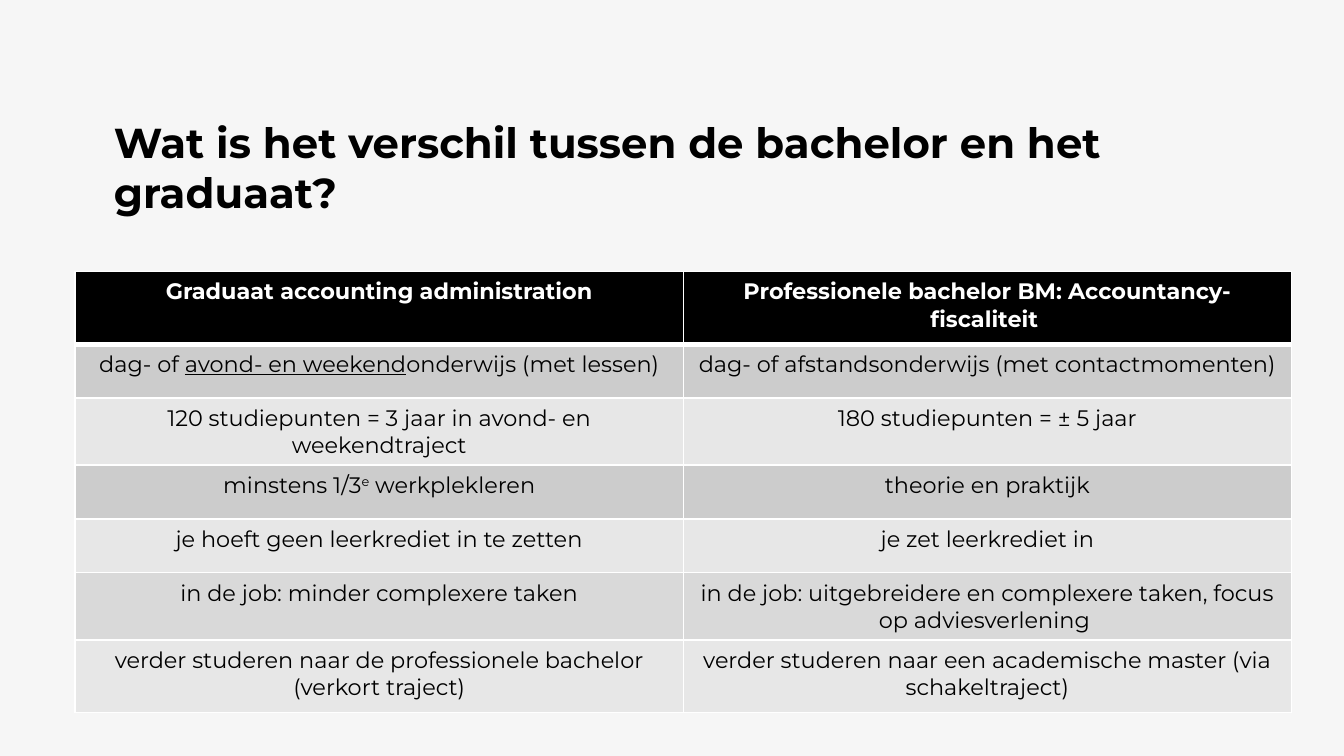
from lxml import etree
from pptx import Presentation
from pptx.dml.color import RGBColor
from pptx.enum.text import PP_ALIGN as Align
from pptx.oxml.ns import qn
from pptx.util import Inches, Pt

FONT = "Montserrat"
BLACK, WHITE, BACKGROUND = "000000", "FFFFFF", "F6F6F6"
DARK, MEDIUM, LIGHT = "CCCCCC", "D9D9D9", "E7E7E7"

TITLE = "Wat is het verschil tussen de bachelor en het graduaat?"

# Each row: minimum height, fill, left cell, right cell.
# A cell is a list of runs: (text, format).
ROWS = [
    (0.54, BLACK, [("Graduaat accounting administration", {})],
     [("Professionele bachelor BM: Accountancy-fiscaliteit ", {})]),
    (0.4, DARK,
     [("dag- of ", {}), ("avond- en weekend", {"underline": True}),
      ("onderwijs (met lessen)", {})],
     [("dag- of afstandsonderwijs (met contactmomenten)", {})]),
    (0.3, LIGHT,
     [("120 studiepunten = 3 jaar in avond- en weekendtraject", {})],
     [("180 studiepunten = ± 5 jaar", {})]),
    (0.4, DARK,
     [("minstens 1/3", {}), ("e", {"baseline": 30}), (" werkplekleren", {})],
     [("theorie en praktijk", {})]),
    (0.4, LIGHT, [("je hoeft geen leerkrediet in te zetten", {})],
     [("je zet leerkrediet in", {})]),
    (0.5, MEDIUM, [("in de job: minder complexere taken", {})],
     [("in de job: uitgebreidere en complexere taken, "
       "focus op adviesverlening ", {})]),
    (0.54, LIGHT,
     [("verder studeren naar de professionele bachelor (verkort traject)", {})],
     [("verder studeren naar een academische master (via schakeltraject)", {})]),
]


def color(value):
    return RGBColor.from_string(value)


def add_run(paragraph, text, size=12, fill=BLACK, bold=False,
            underline=False, baseline=0):
    run = paragraph.add_run()
    run.text = text
    font = run.font
    font.name, font.size, font.bold = FONT, Pt(size), bold
    font.color.rgb = color(fill)
    if underline:
        font.underline = True
    if baseline:
        font._element.set("baseline", str(baseline * 1000))


def set_borders(cell, **widths):
    """Draw white cell borders; they must precede the fill in the XML."""
    properties = cell._tc.get_or_add_tcPr()
    for index, (side, width) in enumerate(widths.items()):
        line = etree.Element(qn(f"a:ln{side}"), w=str(Pt(width)))
        solid = etree.SubElement(line, qn("a:solidFill"))
        etree.SubElement(solid, qn("a:srgbClr"), val=WHITE)
        properties.insert(index, line)


def add_title(slide, left, top, width, height):
    box = slide.shapes.add_textbox(
        Inches(left), Inches(top), Inches(width), Inches(height))
    box.text_frame.word_wrap = True
    add_run(box.text_frame.paragraphs[0], TITLE, size=22.4, bold=True)


def add_comparison(slide, left, top, width, height):
    frame = slide.shapes.add_table(
        len(ROWS), 2, Inches(left), Inches(top),
        Inches(width), Inches(height))
    table = frame.table
    for column in table.columns:
        column.width = Inches(width / 2)

    for row_index, (row_height, fill, *contents) in enumerate(ROWS):
        table.rows[row_index].height = Inches(row_height)
        header = row_index == 0
        for column_index, runs in enumerate(contents):
            cell = table.cell(row_index, column_index)
            cell.fill.solid()
            cell.fill.fore_color.rgb = color(fill)
            # A thick rule separates the header from the body
            set_borders(cell, L=1, R=1, T=3 if row_index == 1 else 1,
                        B=3 if header else 1)
            paragraph = cell.text_frame.paragraphs[0]
            paragraph.alignment = Align.CENTER
            for text, style in runs:
                add_run(paragraph, text, bold=header,
                        fill=WHITE if header else BLACK, **style)
    # Leave room for rows that grow with their text
    frame.height = Inches(height)


def main():
    presentation = Presentation()
    presentation.slide_width = Inches(10)
    presentation.slide_height = Inches(10 * 9 / 16)
    slide = presentation.slides.add_slide(presentation.slide_layouts[6])
    slide.background.fill.solid()
    slide.background.fill.fore_color.rgb = color(BACKGROUND)

    add_title(slide, 0.75, 0.82, 8.5, 0.75)
    add_comparison(slide, 0.56, 2.02, 9.05, 3.28)
    presentation.save("out.pptx")


if __name__ == "__main__":
    main()
